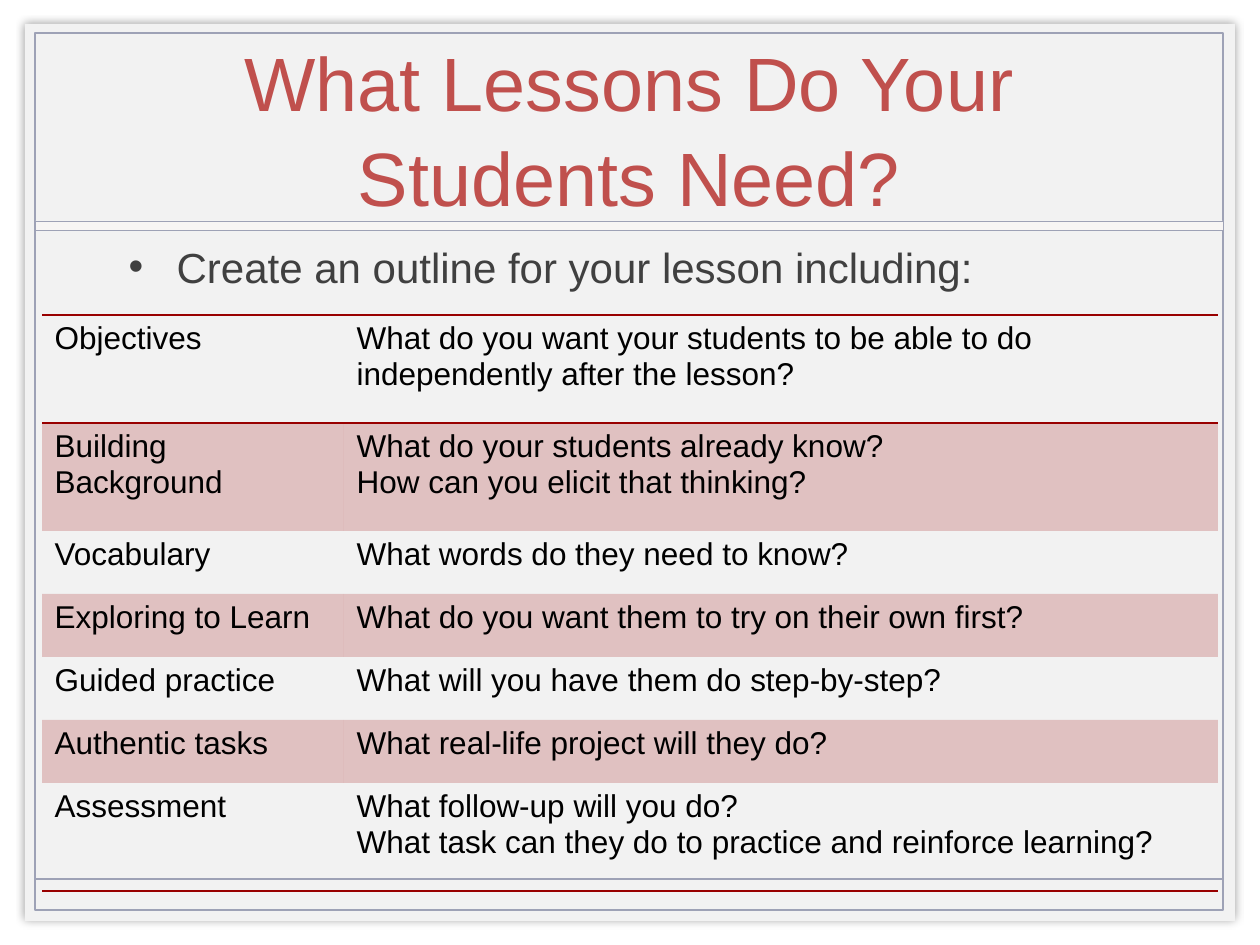
from lxml.etree import SubElement
from pptx import Presentation
from pptx.dml.color import RGBColor
from pptx.enum.shapes import MSO_CONNECTOR, MSO_SHAPE
from pptx.enum.text import MSO_ANCHOR, MSO_AUTO_SIZE, PP_ALIGN
from pptx.oxml import parse_xml
from pptx.oxml.ns import nsdecls, qn
from pptx.util import Pt

# Content
TITLE = "What Lessons Do Your Students Need?"
INTRO = "Create an outline for your lesson including:"
OUTLINE = [
    ("Objectives", ["What do you want your students to be able to do independently after the lesson?"]),
    ("Building Background", ["What do your students already know?", "How can you elicit that thinking?"]),
    ("Vocabulary", ["What words do they need to know?"]),
    ("Exploring to Learn", ["What do you want them to try on their own first?"]),
    ("Guided practice", ["What will you have them do step-by-step?"]),
    ("Authentic tasks", ["What real-life project will they do?"]),
    ("Assessment", ["What follow-up will you do?",
                    "What task can they do to practice and reinforce learning?"]),
]
TALL_ROWS = {0, 1, 6}
TALL, SHORT = 108, 63
COLUMNS = [302, 874]

FONT = "Arial"
PAPER, BAND, RULE = "F2F2F2", "F7F5F4", "9EA2B6"
ACCENT, GREY, BLACK, RED = "C0504D", "404040", "000000", "990000"
NO_GRID_STYLE = "{2D5ABB26-0587-4C30-8999-92F81FD0307C}"


def px(length):
    return length * 914400 // 126


def colour(value):
    return RGBColor.from_string(value)


def style(para, size, value):
    para.font.name = FONT
    para.font.size = Pt(size)
    para.font.color.rgb = colour(value)


def place(shape, left, top, width, height):
    shape.left, shape.top, shape.width, shape.height = map(px, (left, top, width, height))


def add_panel(page, bounds, fill=None, line_width=None):
    panel = page.shapes.add_shape(MSO_SHAPE.RECTANGLE, *map(px, bounds))
    panel.shadow.inherit = False
    if fill:
        panel.fill.solid()
        panel.fill.fore_color.rgb = colour(fill)
    else:
        panel.fill.background()
    if line_width:
        panel.line.color.rgb = colour(RULE)
        panel.line.width = Pt(line_width)
    else:
        panel.line.fill.background()
    return panel


def set_border(cell, side):
    cell._tc.get_or_add_tcPr().insert(0, parse_xml(
        f'<a:{side} {nsdecls("a")} w="12700"><a:solidFill>'
        f'<a:srgbClr val="{RED}"/></a:solidFill></a:{side}>'))


def add_frame(page):
    sheet = add_panel(page, (25, 24, 1210, 897), PAPER)
    effects = sheet._element.spPr.find(qn("a:effectLst"))
    effects.append(parse_xml(
        f'<a:outerShdw {nsdecls("a")} blurRad="{Pt(5)}" dist="0" dir="0">'
        f'<a:srgbClr val="{BLACK}"><a:alpha val="40000"/></a:srgbClr></a:outerShdw>'))
    add_panel(page, (35, 33, 1188, 877), line_width=1)
    footer = page.shapes.add_connector(
        MSO_CONNECTOR.STRAIGHT, px(35), px(879), px(1223), px(879))
    footer.line.color.rgb = colour(RULE)
    footer.line.width = Pt(1)
    SubElement(footer._element.spPr, qn("a:effectLst"))
    add_panel(page, (35, 221, 1188, 9), BAND, 0.25)


def add_headings(page):
    title, body = page.placeholders
    for holder in (title, body):
        page.shapes._spTree.append(holder._element)  # in front of the frame
        holder.text_frame.word_wrap = True
        holder.text_frame.auto_size = MSO_AUTO_SIZE.NONE

    place(title, 123, 34, 1012, 185)
    title.text_frame.text = TITLE
    title.text_frame.vertical_anchor = MSO_ANCHOR.MIDDLE
    title.text_frame.margin_top = title.text_frame.margin_bottom = 0
    para = title.text_frame.paragraphs[0]
    para.alignment = PP_ALIGN.CENTER
    para.line_spacing = 1.05
    style(para, 43.2, ACCENT)

    place(body, 116, 231, 998, 63)
    body.text_frame.text = INTRO
    body.text_frame.margin_top = px(10)
    para = body.text_frame.paragraphs[0]
    para.space_before = Pt(0)
    properties = para._p.get_or_add_pPr()
    properties.set("marL", str(px(48)))
    properties.set("indent", str(-px(48)))
    bullet_colour = SubElement(properties, qn("a:buClr"))
    SubElement(bullet_colour, qn("a:srgbClr"), val=GREY)
    SubElement(properties, qn("a:buChar"), char="•")
    style(para, 24, GREY)


def add_outline(page):
    heights = [TALL if index in TALL_ROWS else SHORT for index in range(len(OUTLINE))]
    table = page.shapes.add_table(
        len(OUTLINE), len(COLUMNS), px(42), px(315), px(sum(COLUMNS)), px(sum(heights))).table
    table.first_row = table.horz_banding = False
    table._tbl.tblPr.find(qn("a:tableStyleId")).text = NO_GRID_STYLE
    for column, width in zip(table.columns, COLUMNS):
        column.width = px(width)

    for index, (topic, questions) in enumerate(OUTLINE):
        table.rows[index].height = px(heights[index])
        for cell, lines in zip(table.rows[index].cells, ([topic], questions)):
            cell.text = "\n".join(lines)
            for para in cell.text_frame.paragraphs:
                style(para, 18, BLACK)
            # Every second row is tinted
            if index % 2:
                cell.fill.solid()
                cell.fill.fore_color.rgb = colour(RED)
                tint = cell._tc.tcPr.find(qn("a:solidFill"))[0]
                SubElement(tint, qn("a:alpha"), val="20000")
            else:
                cell.fill.background()
            # Rules below the first and last rows, and above the first
            if index in (0, len(OUTLINE) - 1):
                set_border(cell, "lnB")
            if index == 0:
                set_border(cell, "lnT")


def main():
    deck = Presentation()
    deck.slide_width, deck.slide_height = px(1260), px(945)
    page = deck.slides.add_slide(deck.slide_layouts[1])
    add_frame(page)
    add_headings(page)
    add_outline(page)
    deck.save("out.pptx")


if __name__ == "__main__":
    main()
